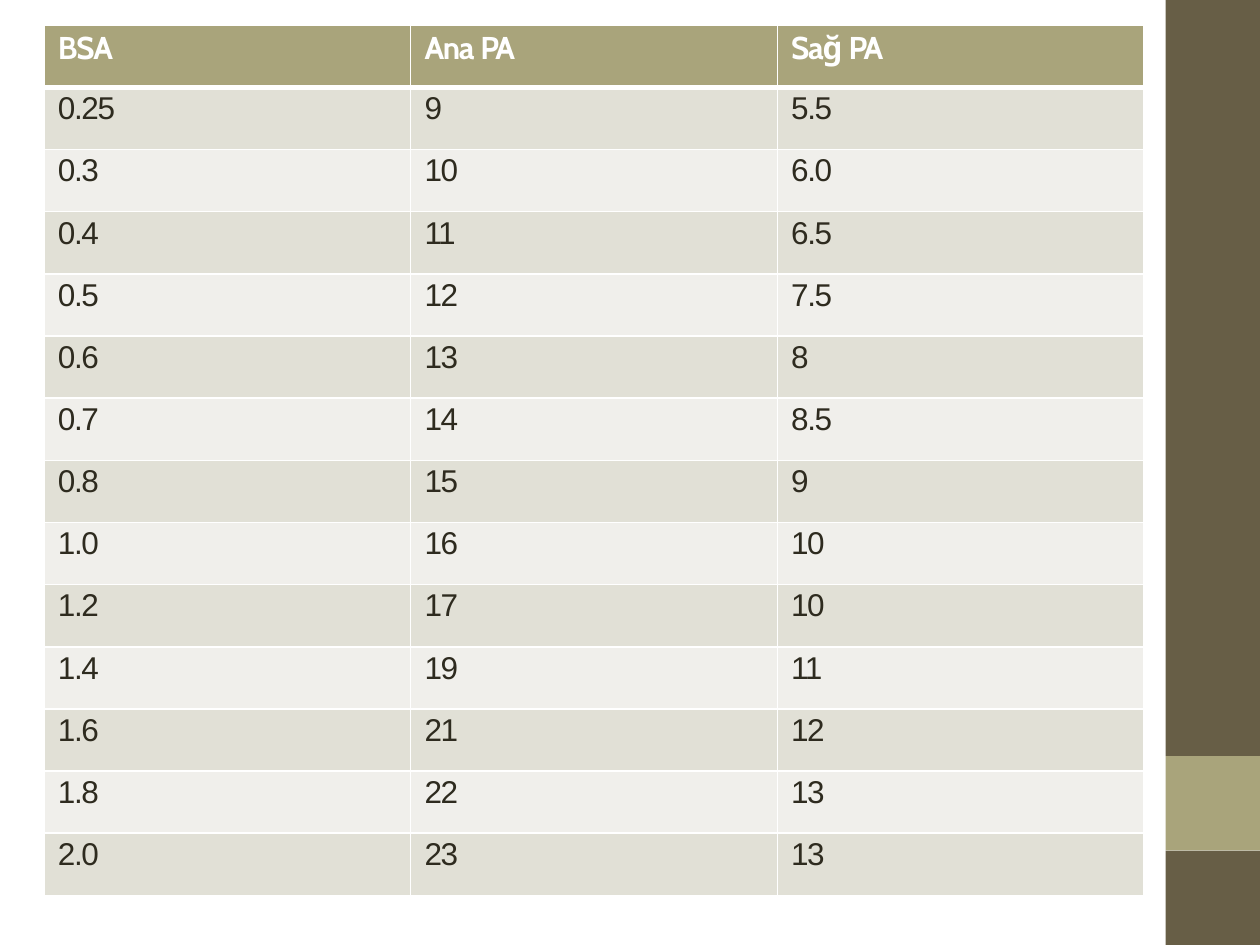
from lxml.etree import SubElement
from pptx import Presentation
from pptx.dml.color import RGBColor
from pptx.enum.shapes import MSO_SHAPE
from pptx.oxml.ns import qn
from pptx.util import Inches, Pt

WHITE = RGBColor(0xFF, 0xFF, 0xFF)
INK = RGBColor(0x2E, 0x2B, 0x1F)
BROWN = RGBColor(0x67, 0x5E, 0x46)
KHAKI = RGBColor(0xA9, 0xA4, 0x7B)
BANDS = (RGBColor(0xE1, 0xE0, 0xD6), RGBColor(0xF0, 0xEF, 0xEB))

# Each heading is a list of (text, letter spacing in points)
HEADS = (
    [("BSA", -0.7)],
    [("Ana ", -0.8), ("PA", -1.4)],
    [("Sağ ", -0.7), ("PA", -1.4)],
)
ROWS = (
    ("0.25", "9", "5.5"),
    ("0.3", "10", "6.0"),
    ("0.4", "11", "6.5"),
    ("0.5", "12", "7.5"),
    ("0.6", "13", "8"),
    ("0.7", "14", "8.5"),
    ("0.8", "15", "9"),
    ("1.0", "16", "10"),
    ("1.2", "17", "10"),
    ("1.4", "19", "11"),
    ("1.6", "21", "12"),
    ("1.8", "22", "13"),
    ("2.0", "23", "13"),
)


def track(text):
    """Return the letter spacing of a value in points."""
    if len(text) == 1:
        return 0
    return -0.8 if "." in text else -0.9


class Deck:
    size = Pt(18)
    head_font = "Cabin"
    body_font = "Arial"

    def __init__(self, slide):
        self.slide = slide

    def block(self, top, height, color):
        shape = self.slide.shapes.add_shape(
            MSO_SHAPE.RECTANGLE, Inches(9.25), Inches(top), Inches(0.75), Inches(height))
        shape.shadow.inherit = False
        shape.fill.solid()
        shape.fill.fore_color.rgb = color
        shape.line.fill.background()

    def table(self, heads, rows):
        count = len(rows) + 1
        frame = self.slide.shapes.add_table(
            count, len(heads), Inches(0.35), Inches(0.2), Inches(8.73), Inches(6.91))
        table = frame.table
        table.first_row = table.horz_banding = False
        for col, parts in enumerate(heads):
            self.cell(table.cell(0, col), parts, KHAKI, bottom=3, head=True)
        for index, row in enumerate(rows):
            for col, text in enumerate(row):
                self.cell(table.cell(index + 1, col), [(text, track(text))],
                          BANDS[index % 2], top=1 if index else 3)

    def cell(self, cell, parts, fill, top=1, bottom=1, head=False):
        cell.margin_left, cell.margin_top = Inches(0.11), Inches(0.03)
        cell.margin_right = cell.margin_bottom = 0
        para = cell.text_frame.paragraphs[0]
        for text, gap in parts:
            run = para.add_run()
            run.text = text
            font = run.font
            font.size = self.size
            font.bold = head
            font.name = self.head_font if head else self.body_font
            font.color.rgb = WHITE if head else INK
            run._r.get_or_add_rPr().set("spc", str(round(gap * 100)))
        self.border(cell, {"lnL": 1, "lnR": 1, "lnT": top, "lnB": bottom})
        cell.fill.solid()
        cell.fill.fore_color.rgb = fill

    def border(self, cell, sides):
        props = cell._tc.get_or_add_tcPr()
        for side, width in sides.items():
            line = SubElement(props, qn(f"a:{side}"), w=str(Pt(width)))
            paint = SubElement(line, qn("a:solidFill"))
            SubElement(paint, qn("a:srgbClr"), val=str(WHITE))


def main():
    show = Presentation()
    show.slide_width, show.slide_height = Inches(10), Inches(7.5)
    deck = Deck(show.slides.add_slide(show.slide_layouts[6]))
    deck.block(0, 6, BROWN)
    deck.block(6.75, 0.75, BROWN)
    deck.block(6, 0.75, KHAKI)
    deck.table(HEADS, ROWS)
    show.save("out.pptx")


if __name__ == "__main__":
    main()
